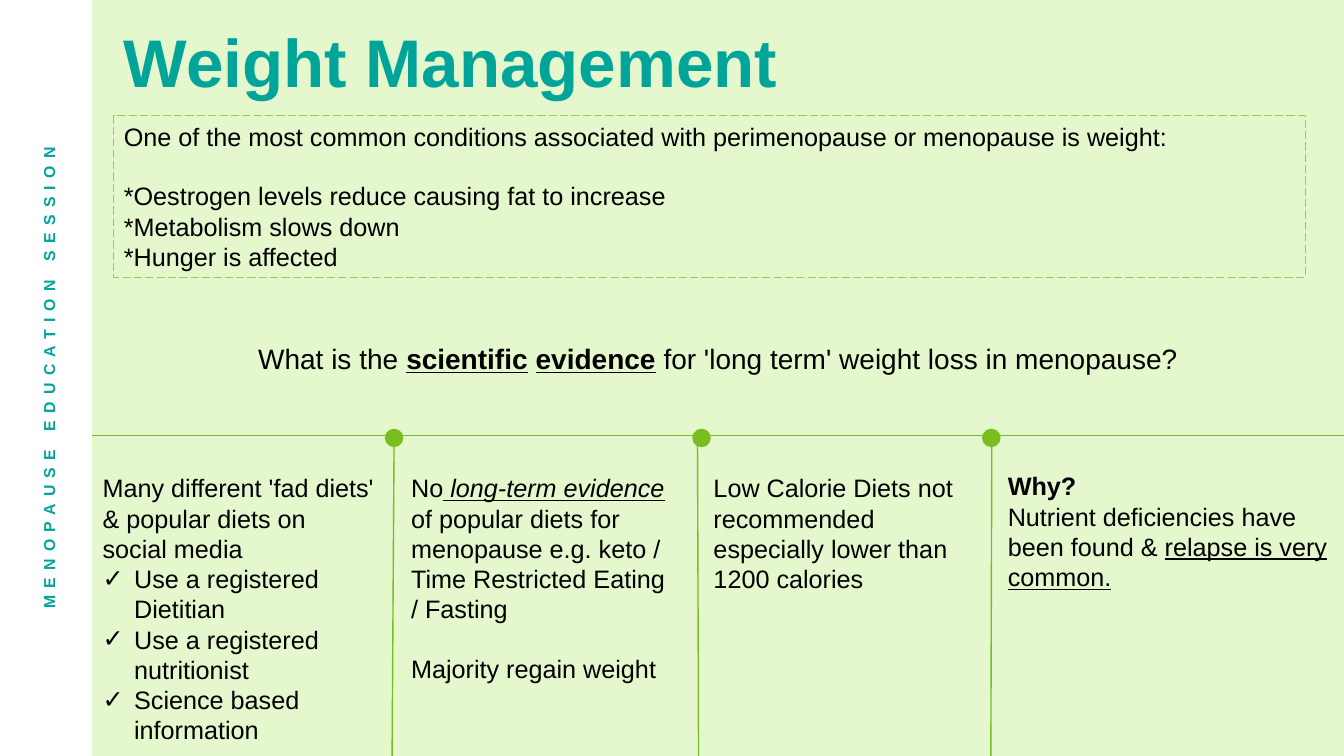
from dataclasses import dataclass

from lxml import etree
from pptx import Presentation
from pptx import util as u
from pptx.dml.color import RGBColor
from pptx.enum import dml, shapes, text
from pptx.oxml.ns import qn


@dataclass(frozen=True)
class Theme:
    """Colours and type sizes of the slide."""
    font: str = "Arial"
    page: str = "E4F7CD"
    sidebar: str = "FFFFFF"
    accent: str = "00A499"
    green: str = "78BE20"
    frame: str = "92D050"
    ink: str = "000000"
    title: float = 48.1
    question: float = 20
    body: float = 18
    label: float = 11.3
    gap: float = 20.7


@dataclass(frozen=True)
class Box:
    """A rectangle in grid columns and rows."""
    left: float
    top: float
    width: float
    height: float

    def emu(self):
        """Return the rectangle in slide lengths."""
        return [grid(n) for n in (self.left, self.top, self.width, self.height)]


THEME = Theme()
COLUMNS, ROWS = 160, 90
SIDEBAR = Box(0, 0, 10.96, ROWS)
RULE_ROW, DOT_ROW, DOT_SIZE = 51.84, 52.14, 2.2
DIVIDERS = [(46.92, 46.68, 46.92), (83.04, 83.16, 83.52), (118.08, 117.96, 118.02)]


def grid(units):
    """Turn grid units into a slide length."""
    return u.Inches(units / 12)


def colour(name):
    """Return the colour object of a hex value."""
    return RGBColor.from_string(name)


def add_bullet(paragraph, mark="✓", indent=3.75):
    """Give a paragraph a hanging check mark."""
    properties = paragraph._p.get_or_add_pPr()
    properties.set("marL", str(grid(indent)))
    properties.set("indent", str(-grid(indent)))
    etree.SubElement(properties, qn("a:buFont")).set("typeface", THEME.font)
    etree.SubElement(properties, qn("a:buChar")).set("char", mark)


def write(shape, paragraphs, size=THEME.body, ink=THEME.ink, align=text.PP_ALIGN.LEFT,
          anchor=text.MSO_ANCHOR.TOP):
    """Fill a shape with paragraphs of (words, style) runs, styles being letters of b, i, u."""
    frame = shape.text_frame
    frame.word_wrap = True
    frame.auto_size = text.MSO_AUTO_SIZE.NONE
    frame.vertical_anchor = anchor
    for index, runs in enumerate(paragraphs):
        paragraph = frame.paragraphs[0] if index == 0 else frame.add_paragraph()
        paragraph.alignment = align
        for words, style in runs:
            run = paragraph.add_run()
            run.text = words
            font = run.font
            font.name, font.size = THEME.font, u.Pt(size)
            font.color.rgb = colour(ink)
            font.bold, font.italic, font.underline = (mark in style for mark in "biu")
    return frame


def add_text(slide, box, paragraphs, **style):
    """Place a text box and return its frame."""
    return write(slide.shapes.add_textbox(*box.emu()), paragraphs, **style)


def add_solid(slide, kind, box, fill):
    """Place a plain filled shape."""
    shape = slide.shapes.add_shape(kind, *box.emu())
    shape.shadow.inherit = False
    shape.fill.solid()
    shape.fill.fore_color.rgb = colour(fill)
    shape.line.fill.background()


def add_line(slide, *ends):
    """Draw a thin green line between two grid points."""
    line = slide.shapes.add_connector(shapes.MSO_CONNECTOR.STRAIGHT, *map(grid, ends))
    line.line.color.rgb = colour(THEME.green)
    line.line.width = u.Pt(1)
    etree.SubElement(line._element.spPr, qn("a:effectLst"))


def add_sidebar(slide, box):
    """Draw the side band with its upward label."""
    add_solid(slide, shapes.MSO_SHAPE.RECTANGLE, box, THEME.sidebar)
    height = 2.4
    label = slide.shapes.add_textbox(*Box(
        box.left + (box.width - box.height) / 2, box.top + (box.height - height) / 2,
        box.height, height).emu())
    label.rotation = 270
    frame = write(label, [[("MENOPAUSE EDUCATION SESSION", "b")]], size=THEME.label,
                  ink=THEME.accent, align=text.PP_ALIGN.CENTER)
    frame.margin_left = frame.margin_right = frame.margin_top = frame.margin_bottom = 0
    frame.paragraphs[0].line_spacing = u.Pt(15.9)
    frame.paragraphs[0].runs[0].font._element.set("spc", "520")


def add_heading(slide, box):
    """Place the slide title."""
    title = slide.shapes.title
    title.left, title.top, title.width, title.height = box.emu()
    write(title, [[("Weight Management", "b")]], size=THEME.title, ink=THEME.accent)


def add_summary(slide, box):
    """Place the dashed box on causes of weight gain."""
    shape = slide.shapes.add_textbox(*box.emu())
    shape.line.color.rgb = colour(THEME.frame)
    shape.line.width = u.Pt(0.75)
    shape.line.dash_style = dml.MSO_LINE.LONG_DASH
    lines = ["One of the most common conditions associated with perimenopause or menopause is weight:",
             "*Oestrogen levels reduce causing fat to increase",
             "*Metabolism slows down", "*Hunger is affected"]
    frame = write(shape, [[(line, "")] for line in lines], anchor=text.MSO_ANCHOR.MIDDLE)
    frame.paragraphs[0].space_after = u.Pt(THEME.gap)


def add_question(slide, box):
    """Place the centred question."""
    add_text(slide, box, [[("What is the ", ""), ("scientific", "bu"), (" ", ""),
                           ("evidence", "bu"),
                           (" for 'long term' weight loss in menopause?", "")]],
             size=THEME.question, align=text.PP_ALIGN.CENTER)


def add_timeline(slide, box):
    """Draw the rule with its dividers and dots."""
    right, bottom = box.left + box.width, box.top + box.height
    add_line(slide, right, box.top, box.left, box.top)
    for top_column, bottom_column, dot_column in DIVIDERS:
        add_line(slide, bottom_column, bottom, top_column, box.top)
        dot = Box(dot_column - DOT_SIZE / 2, DOT_ROW - DOT_SIZE / 2, DOT_SIZE, DOT_SIZE)
        add_solid(slide, shapes.MSO_SHAPE.OVAL, dot, THEME.green)


def add_evidence(slide, top):
    """Place the four columns of findings."""
    tips = ["Use a registered Dietitian", "Use a registered nutritionist",
            "Science based information"]
    diets = add_text(slide, Box(11.04, top, 34.8, 33.96), [
        [("Many different 'fad diets' & popular diets on social media", "")],
        *[[(tip, "")] for tip in tips]])
    for paragraph in diets.paragraphs[1:]:
        add_bullet(paragraph)
    popular = add_text(slide, Box(47.76, top, 34.2, 26.64), [
        [("No", ""), (" long-term evidence", "iu"),
         (" of popular diets for menopause e.g. keto / Time Restricted Eating  / Fasting", "")],
        [("Majority regain weight", "")]])
    popular.paragraphs[0].space_after = u.Pt(THEME.gap)
    add_text(slide, Box(83.76, top, 33.36, 15.72), [
        [("Low Calorie Diets not recommended especially lower than 1200 calories", "")]])
    add_text(slide, Box(118.8, top - 0.24, 41.16, 15.72), [
        [("Why?", "b")],
        [("Nutrient deficiencies have been found & ", ""), ("relapse is very common.", "u")]])


def main():
    """Build and save the slide."""
    presentation = Presentation()
    presentation.slide_width, presentation.slide_height = grid(COLUMNS), grid(ROWS)
    slide = presentation.slides.add_slide(presentation.slide_layouts[5])
    slide.background.fill.solid()
    slide.background.fill.fore_color.rgb = colour(THEME.page)
    add_heading(slide, Box(13.56, 1.8, 88.44, 12.24))
    add_summary(slide, Box(13.56, 13.8, 141.84, 19.2))
    add_question(slide, Box(SIDEBAR.width, 40.08, COLUMNS - SIDEBAR.width, 5.28))
    add_timeline(slide, Box(SIDEBAR.width, RULE_ROW, COLUMNS - SIDEBAR.width, ROWS - RULE_ROW))
    add_sidebar(slide, SIDEBAR)
    add_evidence(slide, 55.68)
    presentation.save("out.pptx")


if __name__ == "__main__":
    main()
